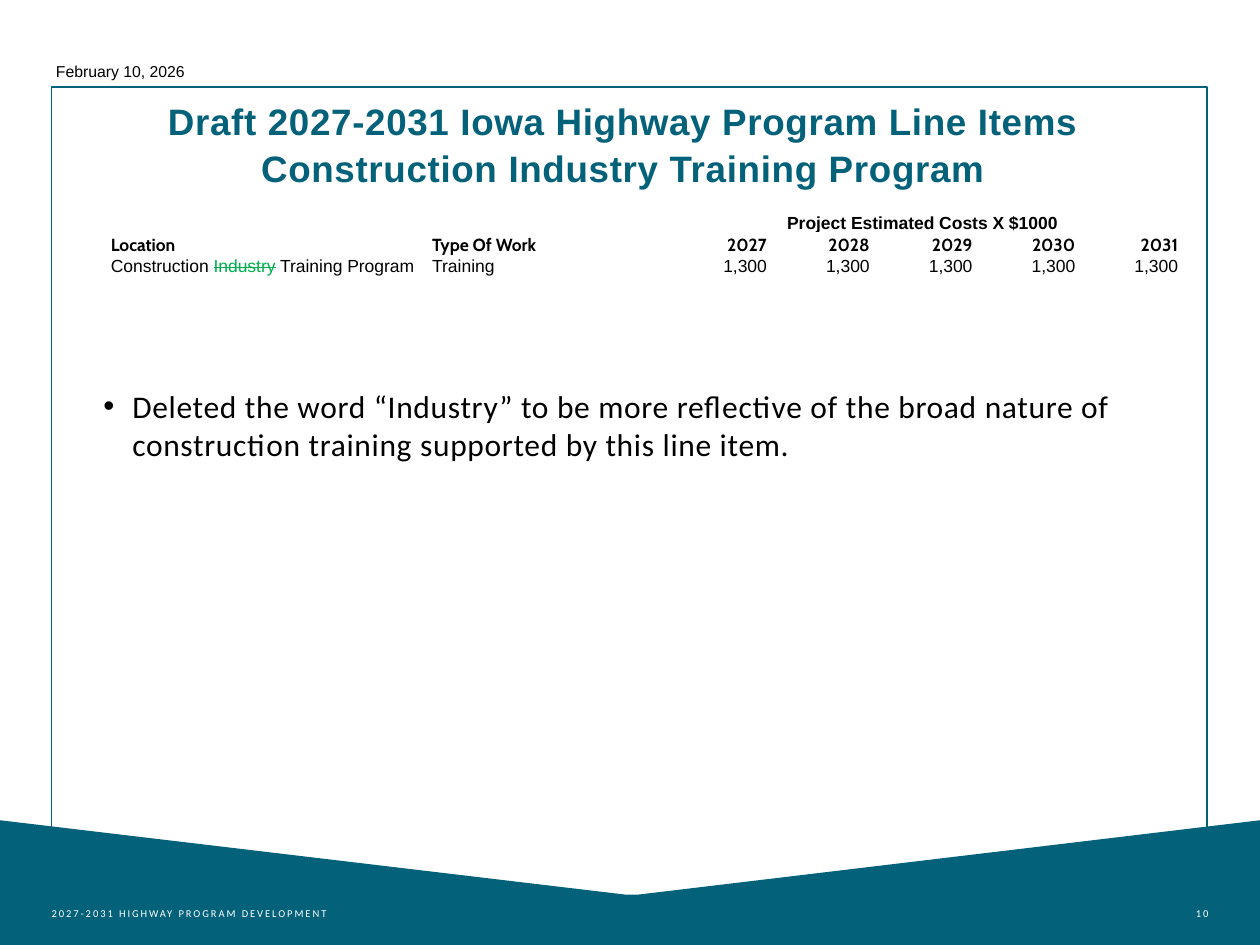
from lxml.etree import SubElement
from pptx import Presentation
from pptx.dml.color import RGBColor
from pptx.enum.shapes import MSO_SHAPE
from pptx.enum.text import MSO_ANCHOR, MSO_AUTO_SIZE, PP_ALIGN
from pptx.oxml.ns import qn
from pptx.util import Inches, Pt

WIDTH, HEIGHT = 10, 7.5
TEAL, BLACK, WHITE, GREEN = "03617A", "000000", "FFFFFF", "00B050"
FRAME_LEFT, FRAME_WIDTH = 0.41, 9.17
BODY_LEFT, BODY_WIDTH = 0.82, 8.35
YEARS = range(2027, 2032)
COST = "1,300"


def color(value):
    return RGBColor.from_string(value)


def place(shape, left, top, width, height):
    shape.left, shape.top = Inches(left), Inches(top)
    shape.width, shape.height = Inches(width), Inches(height)


def add_span(para, text, size, font="Arial", ink=BLACK, bold=False, spacing=0, strike=False):
    span = para.add_run()
    span.text = text
    span.font.size, span.font.name, span.font.bold = Pt(size), font, bold
    span.font.color.rgb = color(ink)
    properties = span.font._element
    if spacing:
        properties.set("spc", str(round(spacing * 100)))
    if strike:
        properties.set("strike", "sngStrike")


def set_frame(frame, margins, anchor=MSO_ANCHOR.TOP, wrap=True):
    frame.word_wrap, frame.vertical_anchor = wrap, anchor
    frame.margin_left, frame.margin_top, frame.margin_right, frame.margin_bottom = map(Inches, margins)


def add_text_box(page, area, margins, anchor=MSO_ANCHOR.TOP, wrap=True):
    box = page.shapes.add_textbox(0, 0, 0, 0)
    place(box, *area)
    set_frame(box.text_frame, margins, anchor, wrap)
    return box.text_frame


def add_band(page):
    # Bottom band with a shallow notch in its top edge
    top, notch = 6.51, 7.1
    points = [(4.96, notch), (5.07, notch), (WIDTH, top), (WIDTH, HEIGHT), (0, HEIGHT)]
    builder = page.shapes.build_freeform(0, Inches(top), scale=1)
    builder.add_line_segments([(Inches(x), Inches(y)) for x, y in points], close=True)
    band = builder.convert_to_shape()
    band.shadow.inherit = False
    band.fill.solid()
    band.fill.fore_color.rgb = color(TEAL)
    band.line.fill.background()


def add_border(page):
    border = page.shapes.add_shape(MSO_SHAPE.RECTANGLE, 0, 0, 0, 0)
    place(border, FRAME_LEFT, 0.69, FRAME_WIDTH, 6.66)
    border.shadow.inherit = False
    border.fill.background()
    border.line.color.rgb = color(TEAL)
    border.line.width = Pt(1)


def add_footer(page, text, left, width, align):
    frame = add_text_box(page, (left, 6.95, width, 0.4), (0, 0.05, 0, 0.05), MSO_ANCHOR.BOTTOM)
    para = frame.paragraphs[0]
    para.alignment = align
    add_span(para, text, 6, "Calibri", WHITE, spacing=1.1)


def add_title(page, lines):
    title = page.shapes.title
    place(title, BODY_LEFT, 0.71, BODY_WIDTH, 0.83)
    frame = title.text_frame
    frame.auto_size = MSO_AUTO_SIZE.NONE
    set_frame(frame, (0, 0.05, 0.1, 0.05))
    for index, line in enumerate(lines):
        para = frame.add_paragraph() if index else frame.paragraphs[0]
        para.alignment = PP_ALIGN.CENTER
        para.line_spacing = 1.07
        para.space_before = Pt(0)
        add_span(para, line, 21, ink=TEAL, bold=True, spacing=0.4)


def add_date(page, text):
    frame = add_text_box(page, (0.32, 0.44, 1.27, 0.25), (0.1, 0.05, 0.1, 0.05), wrap=False)
    frame.auto_size = MSO_AUTO_SIZE.SHAPE_TO_FIT_TEXT
    frame.paragraphs[0].alignment = PP_ALIGN.CENTER
    add_span(frame.paragraphs[0], text, 9)


def add_bullet(page, text):
    frame = add_text_box(page, (BODY_LEFT, 3.02, BODY_WIDTH, 3.08), (0, 0.05, 0.1, 0.05))
    para = frame.paragraphs[0]
    properties = para._p.get_or_add_pPr()
    properties.set("marL", str(Inches(0.23)))
    properties.set("indent", str(-Inches(0.23)))
    SubElement(properties, qn("a:buFont"), typeface="Arial")
    SubElement(properties, qn("a:buChar"), char="•")
    add_span(para, text, 18, "Calibri", spacing=0.4)


def fill_cell(cell, spans, align=PP_ALIGN.LEFT, fill=None, **style):
    cell.margin_left = cell.margin_top = cell.margin_right = Inches(0.01)
    cell.margin_bottom = 0
    if fill:
        cell.fill.solid()
        cell.fill.fore_color.rgb = color(fill)
    else:
        cell.fill.background()
    para = cell.text_frame.paragraphs[0]
    para.alignment = align
    for text, extra in spans:
        add_span(para, text, 10, **style, **extra)
    if not spans:
        SubElement(para._p, qn("a:endParaRPr"), sz="1000")


def add_cost_table(page):
    total, text_widths, heights = 8.49, [2.55, 1.86], [0.19, 0.17, 0.17]
    first_year = len(text_widths)
    widths = text_widths + [(total - sum(text_widths)) / len(YEARS)] * len(YEARS)
    table = page.shapes.add_table(len(heights), len(widths), Inches(0.87), Inches(1.66),
                                  Inches(total), Inches(sum(heights))).table
    table.first_row = table.horz_banding = False
    for column, width in zip(table.columns, widths):
        column.width = Inches(width)
    for row, height in zip(table.rows, heights):
        row.height = Inches(height)

    # Heading over the year columns
    for column in range(len(widths)):
        spans = [("Project Estimated Costs X $1000", {})] if column == first_year else []
        fill_cell(table.cell(0, column), spans, PP_ALIGN.CENTER, bold=True)
    heading = table.cell(0, first_year)
    heading.vertical_anchor = MSO_ANCHOR.BOTTOM
    heading.merge(table.cell(0, len(widths) - 1))

    # Column names and the line item
    names = ["Location", "Type Of Work", *map(str, YEARS)]
    location = [("Construction ", {}), ("Industry", {"ink": GREEN, "strike": True}), (" Training Program", {})]
    values = [location, [("Training", {})]] + [[(COST, {})]] * len(YEARS)
    for column, (name, spans) in enumerate(zip(names, values)):
        align = PP_ALIGN.LEFT if column < first_year else PP_ALIGN.RIGHT
        fill_cell(table.cell(1, column), [(name, {})], align, WHITE, font="Cabin", bold=True)
        fill_cell(table.cell(2, column), spans, align)


def main():
    deck = Presentation()
    deck.slide_width, deck.slide_height = Inches(WIDTH), Inches(HEIGHT)
    page = deck.slides.add_slide(deck.slide_layouts[5])
    page.background.fill.solid()
    page.background.fill.fore_color.rgb = color(WHITE)

    # Page frame and footer
    add_band(page)
    add_border(page)
    add_footer(page, "2027-2031 HIGHWAY PROGRAM DEVELOPMENT", FRAME_LEFT, 2.67, PP_ALIGN.LEFT)
    add_footer(page, "10", 8.62, 0.97, PP_ALIGN.RIGHT)

    # Content
    add_date(page, "February 10, 2026")
    add_title(page, ["Draft 2027-2031 Iowa Highway Program Line Items",
                     "Construction Industry Training Program"])
    add_bullet(page, "Deleted the word “Industry” to be more reflective of the broad nature "
                     "of construction training supported by this line item.")
    add_cost_table(page)
    deck.save("out.pptx")


if __name__ == "__main__":
    main()
